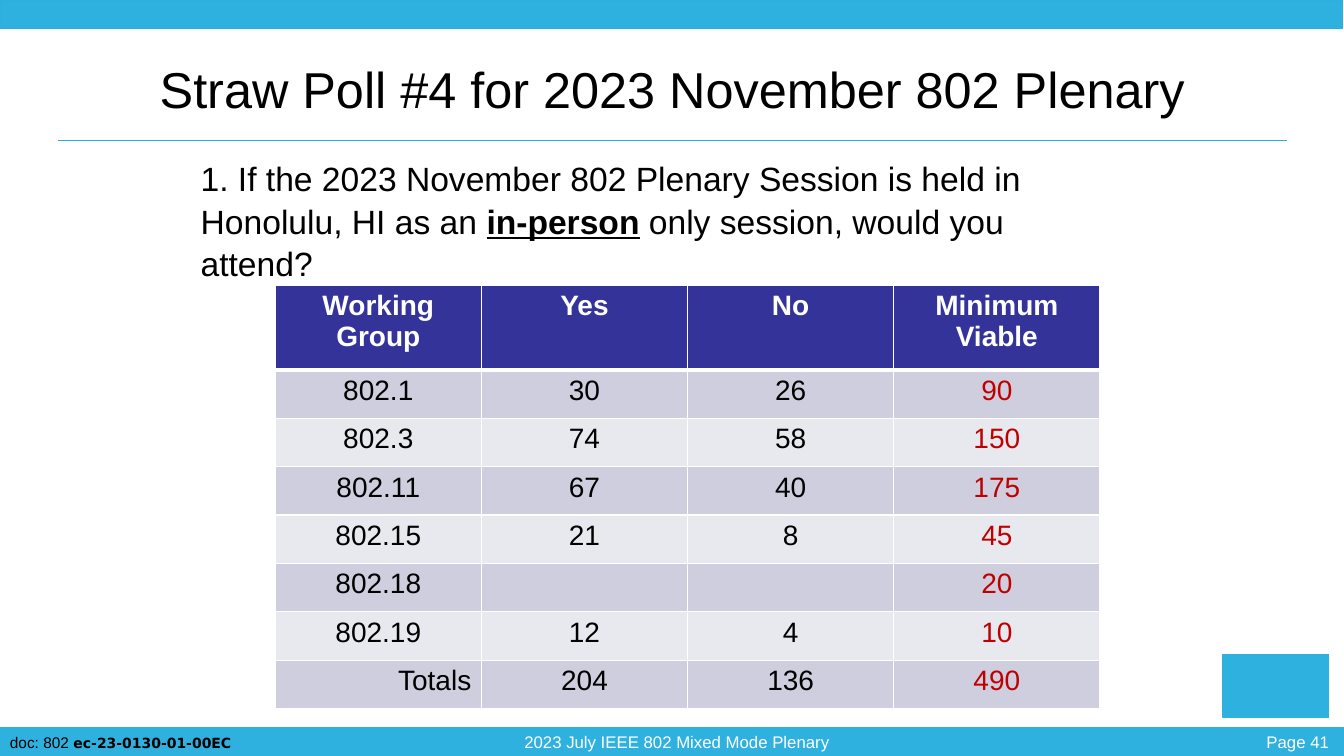
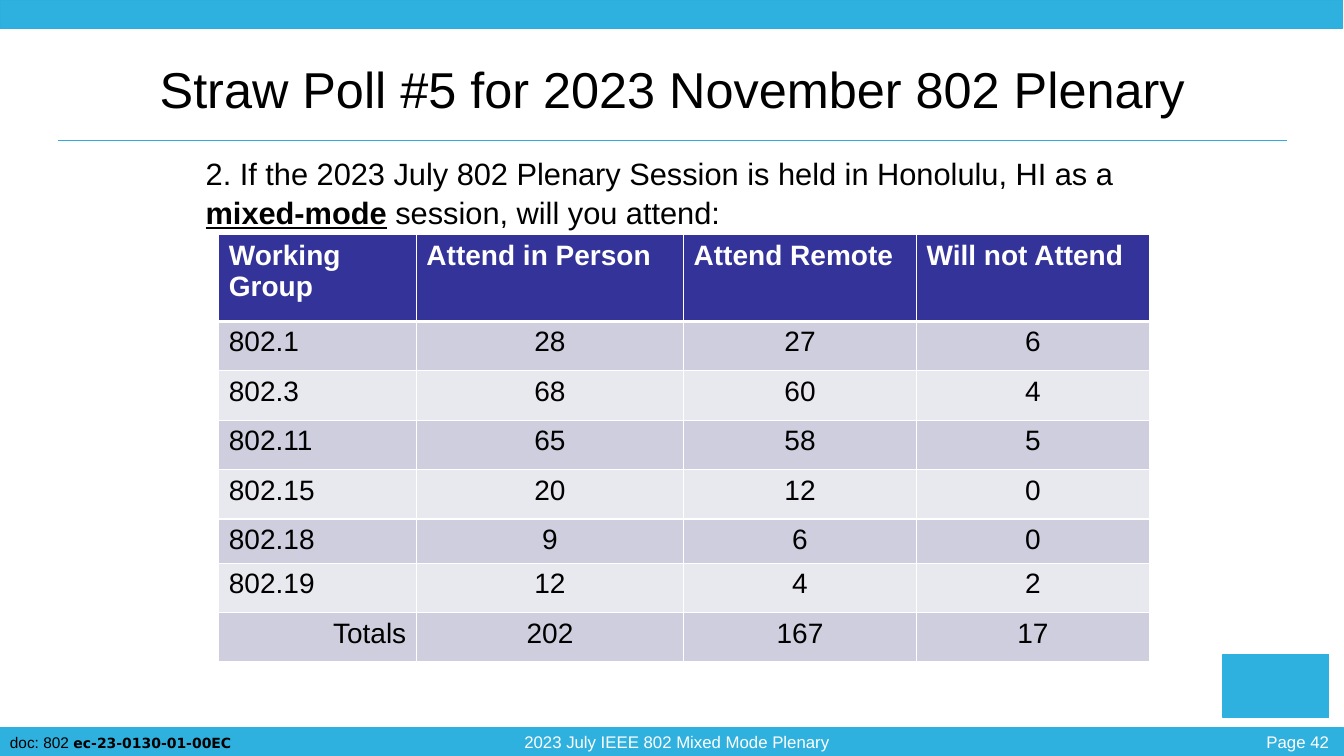
from dataclasses import dataclass

from lxml.etree import SubElement
from pptx import Presentation
from pptx.dml.color import RGBColor as Rgb
from pptx.enum.shapes import MSO_CONNECTOR as Link, MSO_SHAPE as Form
from pptx.enum.text import MSO_ANCHOR as Anchor, MSO_AUTO_SIZE as Fit, PP_ALIGN as Align
from pptx.oxml import parse_xml
from pptx.oxml.ns import nsdecls, qn
from pptx.util import Inches, Pt


@dataclass(frozen=True)
class Theme:
    sky: str = "2FB1DF"
    rule: str = "2FADDF"
    navy: str = "333399"
    dark: str = "CECEDE"
    light: str = "E8E8EF"
    red: str = "C00000"
    black: str = "000000"
    white: str = "FFFFFF"
    font: str = "Arial"
    code: str = "DejaVu Sans"
    title: int = 36
    cell: int = 20
    foot: int = 12
    doc: int = 11
    mark: int = 10


@dataclass(frozen=True)
class Box:
    left: float
    top: float
    width: float
    height: float

    def spans(self) -> list:
        return [Inches(n) for n in (self.left, self.top, self.width, self.height)]


@dataclass(frozen=True)
class Poll:
    number: int
    page: int
    ask: tuple
    size: int
    body: Box
    place: Box
    cols: tuple
    rows: tuple
    heads: tuple
    votes: tuple
    side: Align
    last: str


LOOK = Theme()
BANDS = (
    (Box(0, 7.22, 13.33, 0.28), LOOK.sky),
    (Box(0, 0, 13.32, 0.28), LOOK.rule),
    (Box(12.13, 6.49, 1.05, 0.63), LOOK.sky),
)
GROUPS = ("802.1", "802.3", "802.11", "802.15", "802.18", "802.19", "Totals")
POLLS = (
    Poll(
        4, 41,
        ("1. If the 2023 November 802 Plenary Session is held in Honolulu, HI as an ",
         "in-person", " only session, would you attend?"),
        24, Box(1.89, 1.5, 8.81, 1.33), Box(2.73, 2.83, 8.18, 4.22),
        (8.18 / 4,) * 4, (0.84,) + (0.48,) * 7,
        ("Working Group", "Yes", "No", "Minimum Viable"),
        (("30", "26", "90"), ("74", "58", "150"), ("67", "40", "175"),
         ("21", "8", "45"), ("", "", "20"), ("12", "4", "10"),
         ("204", "136", "490")),
        Align.CENTER, LOOK.red,
    ),
    Poll(
        5, 42,
        ("2. If the 2023 July 802 Plenary Session is held in Honolulu, HI as a ",
         "mixed-mode", " session, will you attend:"),
        22, Box(1.94, 1.47, 9.23, 1.17), Box(2.17, 2.33, 9.23, 4.22),
        (1.96, 2.65, 2.31, 2.31), (0.86,) + (0.49,) * 4 + (0.44, 0.49, 0.49),
        ("Working Group", "Attend in Person", "Attend Remote", "Will not Attend"),
        (("28", "27", "6"), ("68", "60", "4"), ("65", "58", "5"),
         ("20", "12", "0"), ("9", "6", "0"), ("12", "4", "2"),
         ("202", "167", "17")),
        Align.LEFT, LOOK.black,
    ),
)


def write(para, text: str, *, size: int, color: str = LOOK.black,
          font: str = LOOK.font, bold: bool = False, under: bool = False,
          align: Align = Align.LEFT) -> None:
    para.alignment = align
    run = para.add_run()
    run.text = text
    face = run.font
    face.name, face.size = font, Pt(size)
    face.bold, face.underline = bold, under
    face.color.rgb = Rgb.from_string(color)


def place(shape, box: Box) -> None:
    shape.left, shape.top, shape.width, shape.height = box.spans()


def label(slide, box: Box):
    frame = slide.shapes.add_textbox(*box.spans()).text_frame
    frame.word_wrap = True
    return frame.paragraphs[0]


def band(slide, box: Box, edge: str) -> None:
    shape = slide.shapes.add_shape(Form.RECTANGLE, *box.spans())
    shape.shadow.inherit = False
    shape.fill.solid()
    shape.fill.fore_color.rgb = Rgb.from_string(LOOK.sky)
    shape.line.color.rgb = Rgb.from_string(edge)
    shape.line.width = Pt(0.75)


def rule(slide) -> None:
    line = slide.shapes.add_connector(
        Link.STRAIGHT, Inches(0.58), Inches(1.39), Inches(12.76), Inches(1.39))
    line.line.color.rgb = Rgb.from_string(LOOK.rule)
    line.line.width = Pt(0.75)
    SubElement(line.element.spPr, qn("a:effectLst"))


def frame(slide, page: int) -> None:
    for box, edge in BANDS:
        band(slide, box, edge)
    rule(slide)
    foot = dict(size=LOOK.foot, color=LOOK.white)
    write(label(slide, Box(11.6, 7.21, 1.68, 0.3)), f"Page {page}",
          align=Align.RIGHT, **foot)
    write(label(slide, Box(0.05, 7.21, 13.33, 0.3)),
          "2023 July IEEE 802 Mixed Mode Plenary", align=Align.CENTER, **foot)
    doc = label(slide, Box(0, 7.22, 3.33, 0.29))
    write(doc, "doc: 802 ", size=LOOK.doc)
    write(doc, "ec-23-0130-01-00EC", size=LOOK.mark, font=LOOK.code, bold=True)


def head(slide, number: int) -> None:
    title = slide.shapes.title
    place(title, Box(0.67, 0.44, 12, 0.87))
    title.text_frame.vertical_anchor = Anchor.MIDDLE
    title.text_frame.auto_size = Fit.NONE
    write(title.text_frame.paragraphs[0],
          f"Straw Poll #{number} for 2023 November 802 Plenary",
          size=LOOK.title, align=Align.CENTER)


def ask(slide, poll: Poll) -> None:
    body = slide.placeholders[1]
    place(body, poll.body)
    body.text_frame.auto_size = Fit.NONE
    para = body.text_frame.paragraphs[0]
    props = para._p.get_or_add_pPr()
    props.set("marL", "0")
    props.set("indent", "0")
    SubElement(props, qn("a:buNone"))
    para.space_before = Pt(0)
    para.line_spacing = 1.05
    for spot, text in enumerate(poll.ask):
        stress = spot == 1
        write(para, text, size=poll.size, bold=stress, under=stress)


def paint(cell, fill: str, row: int) -> None:
    cell.fill.solid()
    cell.fill.fore_color.rgb = Rgb.from_string(fill)
    props = cell._tc.get_or_add_tcPr()
    thick = {(0, "B"), (1, "T")}
    for spot, side in enumerate("LRTB"):
        width = Pt(3 if (row, side) in thick else 1)
        props.insert(spot, parse_xml(
            f'<a:ln{side} {nsdecls("a")} w="{width}"><a:solidFill>'
            f'<a:srgbClr val="{LOOK.white}"/></a:solidFill></a:ln{side}>'))


def align(poll: Poll, row: int, col: int) -> Align:
    if row == len(GROUPS) and col == 0:
        return Align.RIGHT
    return poll.side if row == 0 or col == 0 else Align.CENTER


def grid(slide, poll: Poll) -> None:
    data = [poll.heads] + [(name, *vote) for name, vote in zip(GROUPS, poll.votes)]
    table = slide.shapes.add_table(
        len(data), len(poll.cols), *poll.place.spans()).table
    for col, width in zip(table.columns, poll.cols):
        col.width = Inches(width)
    for row, height in zip(table.rows, poll.rows):
        row.height = Inches(height)
    for row, texts in enumerate(data):
        top = row == 0
        fill = LOOK.navy if top else LOOK.dark if row % 2 else LOOK.light
        for col, text in enumerate(texts):
            cell = table.cell(row, col)
            paint(cell, fill, row)
            tail = poll.last if col == len(texts) - 1 else LOOK.black
            if text:
                write(cell.text_frame.paragraphs[0], text, size=LOOK.cell,
                      color=LOOK.white if top else tail, bold=top,
                      align=align(poll, row, col))


def main() -> None:
    deck = Presentation()
    deck.slide_width, deck.slide_height = Inches(13.33), Inches(7.5)
    for poll in POLLS:
        slide = deck.slides.add_slide(deck.slide_layouts[1])
        frame(slide, poll.page)
        head(slide, poll.number)
        ask(slide, poll)
        grid(slide, poll)
    deck.save("out.pptx")


if __name__ == "__main__":
    main()
